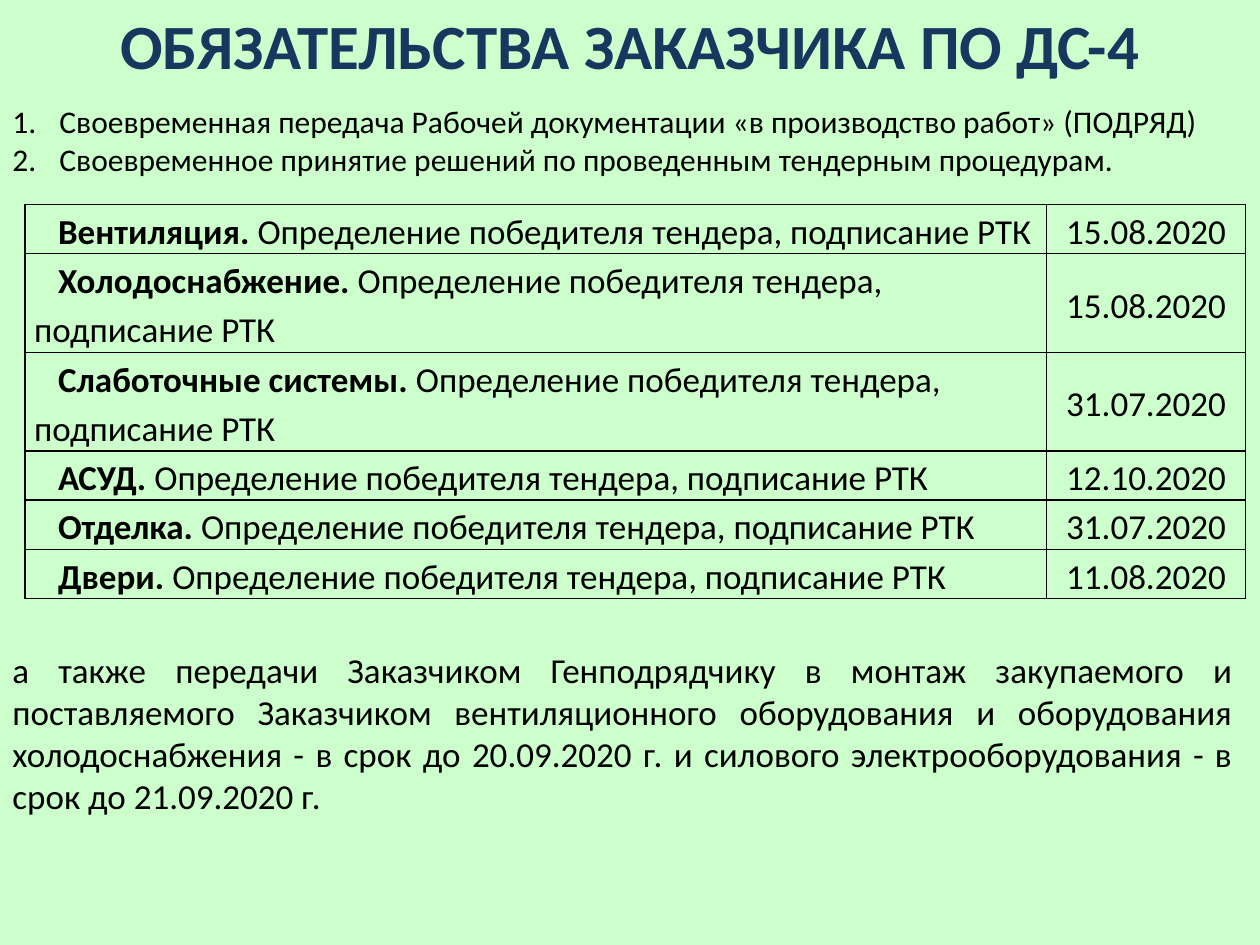
from lxml.etree import SubElement
from pptx import Presentation
from pptx.dml.color import RGBColor
from pptx.enum.text import MSO_ANCHOR, PP_ALIGN
from pptx.oxml.ns import qn
from pptx.util import Cm, Pt

MINT = RGBColor(0xCC, 0xFF, 0xCC)
NAVY = RGBColor(0x17, 0x37, 0x5E)
BLACK = RGBColor(0, 0, 0)


def add_text(paragraph, text, size, color=BLACK, bold=False):
    run = paragraph.add_run()
    run.text = text
    run.font.name = "Calibri"
    run.font.size = Pt(size)
    run.font.bold = bold
    run.font.color.rgb = color


def add_frame(left, top, width, height):
    frame = slide.shapes.add_textbox(Cm(left), Cm(top), Cm(width), Cm(height)).text_frame
    frame.word_wrap = True
    return frame


deck = Presentation()
deck.slide_width = Cm(25.4)
deck.slide_height = Cm(19.05)
slide = deck.slides.add_slide(deck.slide_layouts[6])
slide.background.fill.solid()
slide.background.fill.fore_color.rgb = MINT

tenders = [
    ("Вентиляция.", "15.08.2020", 1),
    ("Холодоснабжение.", "15.08.2020", 2),
    ("Слаботочные системы.", "31.07.2020", 2),
    ("АСУД.", "12.10.2020", 1),
    ("Отделка.", "31.07.2020", 1),
    ("Двери.", "11.08.2020", 1),
]
LINE_HEIGHT = 0.98
schedule = slide.shapes.add_table(
    len(tenders), 2, Cm(0.5), Cm(4.12), Cm(24.61), Cm(7.8)
).table
schedule.first_row = False
schedule.horz_banding = False
schedule.columns[0].width = Cm(20.6)
schedule.columns[1].width = Cm(4.01)

for row, (work, deadline, lines) in enumerate(tenders):
    schedule.rows[row].height = Cm(LINE_HEIGHT * lines)
    task = schedule.cell(row, 0).text_frame.paragraphs[0]
    properties = task._p.get_or_add_pPr()
    properties.set("marL", "0")
    properties.set("indent", str(Cm(0.48)))
    add_text(task, work + " ", 20, bold=True)
    add_text(task, "Определение победителя тендера, подписание РТК", 20)
    due = schedule.cell(row, 1).text_frame.paragraphs[0]
    due.alignment = PP_ALIGN.CENTER
    add_text(due, deadline, 20)

for cell in schedule.iter_cells():
    cell.vertical_anchor = MSO_ANCHOR.MIDDLE
    cell.margin_left = cell.margin_right = Cm(0.19)
    cell.margin_top = cell.margin_bottom = Cm(0)
    cell.text_frame.paragraphs[0].line_spacing = 1.15
    for side in ("a:lnL", "a:lnR", "a:lnT", "a:lnB"):
        border = SubElement(cell._tc.get_or_add_tcPr(), qn(side), w=str(Pt(1)))
        fill = SubElement(border, qn("a:solidFill"))
        SubElement(fill, qn("a:srgbClr"), val=str(BLACK))
    cell.fill.background()

delivery = add_frame(0, 12.93, 25.1, 3.68)
delivery.vertical_anchor = MSO_ANCHOR.MIDDLE
delivery.paragraphs[0].alignment = PP_ALIGN.JUSTIFY
add_text(
    delivery.paragraphs[0],
    "а также передачи Заказчиком Генподрядчику в монтаж закупаемого и "
    "поставляемого Заказчиком вентиляционного оборудования и оборудования "
    "холодоснабжения - в срок до 20.09.2020 г. и силового "
    "электрооборудования - в срок до 21.09.2020 г.",
    20,
)

title = add_frame(0, 0, 25.4, 1.8).paragraphs[0]
title.alignment = PP_ALIGN.CENTER
add_text(title, "ОБЯЗАТЕЛЬСТВА ЗАКАЗЧИКА ПО ДС-4", 36, NAVY, True)

obligations = add_frame(0, 1.93, 25.4, 1.8)
for number, duty in enumerate([
    "Своевременная передача Рабочей документации «в производство работ» (ПОДРЯД)",
    "Своевременное принятие решений по проведенным тендерным процедурам.",
]):
    item = obligations.add_paragraph() if number else obligations.paragraphs[0]
    properties = item._p.get_or_add_pPr()
    properties.set("marL", str(Cm(0.95)))
    properties.set("indent", str(Cm(-0.95)))
    SubElement(properties, qn("a:buFont"), typeface="+mj-lt")
    SubElement(properties, qn("a:buAutoNum"), type="arabicPeriod")
    add_text(item, duty, 18)

deck.save("out.pptx")
